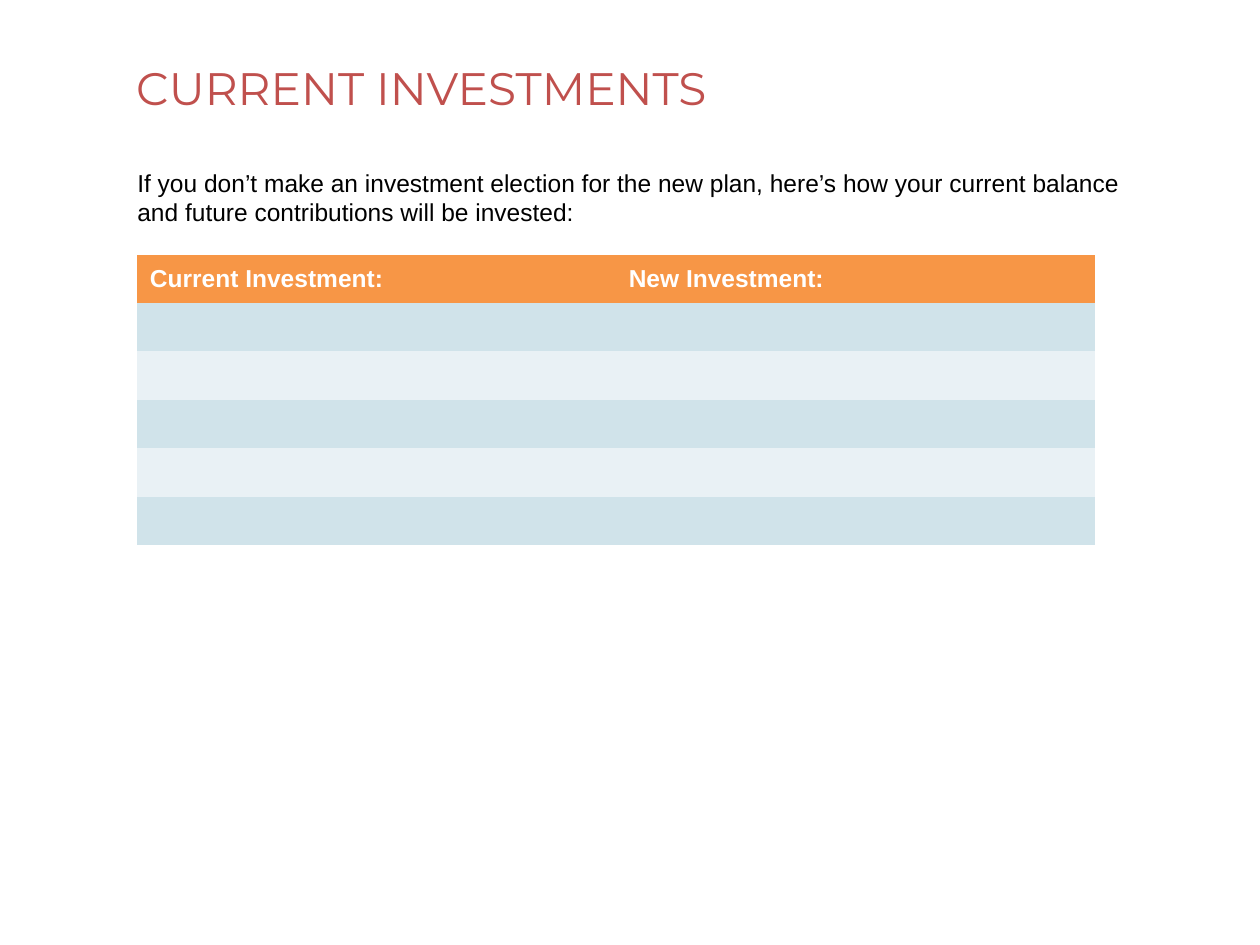
from pptx import Presentation
from pptx.dml.color import RGBColor
from pptx.enum import text
from pptx.util import Inches, Pt

# Content
TITLE = "CURRENT INVESTMENTS"
INTRO = ("If you don’t make an investment election for the new plan, here’s how "
         "your current balance and future contributions will be invested:")
HEADERS = ["Current Investment:", "New Investment:"]
EMPTY_ROWS = 5

# Colours and table style
RED = RGBColor(0xC0, 0x50, 0x4D)
BLACK = RGBColor(0x00, 0x00, 0x00)
WHITE = RGBColor(0xFF, 0xFF, 0xFF)
ORANGE = RGBColor(0xF7, 0x96, 0x46)
BANDS = [RGBColor(0xD0, 0xE3, 0xEA), RGBColor(0xE9, 0xF1, 0xF5)]
PLAIN_STYLE = "{2D5ABB26-0587-4C30-8999-92F81FD0307C}"  # no style, no grid


def write(frame, words, *, font="Arial", size=14, color=BLACK, bold=False, spacing=None):
    paragraph = frame.paragraphs[0]
    paragraph.alignment = text.PP_ALIGN.LEFT
    paragraph.line_spacing = spacing
    run = paragraph.add_run()
    run.text = words
    run.font.name, run.font.size, run.font.bold = font, Pt(size), bold
    run.font.color.rgb = color


def place(shape, left, top, width, height, anchor):
    shape.left, shape.top = Inches(left), Inches(top)
    shape.width, shape.height = Inches(width), Inches(height)
    frame = shape.text_frame
    frame.word_wrap = True
    frame.auto_size = text.MSO_AUTO_SIZE.NONE
    frame.vertical_anchor = anchor
    frame.margin_left = frame.margin_top = frame.margin_right = frame.margin_bottom = 0
    return frame


presentation = Presentation()
presentation.slide_width, presentation.slide_height = Inches(10), Inches(7.5)
slide = presentation.slides.add_slide(presentation.slide_layouts[5])

# Title and introduction
title = place(slide.shapes.title, 1.08, 0.32, 8.17, 0.81, text.MSO_ANCHOR.MIDDLE)
write(title, TITLE, font="Montserrat", size=26, color=RED, spacing=0.85)
intro_box = slide.shapes.add_textbox(0, 0, 0, 0)
write(place(intro_box, 1.09, 1.33, 7.83, 0.55, text.MSO_ANCHOR.TOP), INTRO)

# Investment table: header row, then alternating bands
table_shape = slide.shapes.add_table(
    1 + EMPTY_ROWS, len(HEADERS), Inches(1.09), Inches(2.02), Inches(7.6), Inches(2.31))
table = table_shape.table
table._tbl.tblPr[0].text = PLAIN_STYLE
for row_index, row in enumerate(table.rows):
    for column_index, cell in enumerate(row.cells):
        cell.vertical_anchor = text.MSO_ANCHOR.MIDDLE
        cell.fill.solid()
        if row_index == 0:
            cell.fill.fore_color.rgb = ORANGE
            write(cell.text_frame, HEADERS[column_index], color=WHITE, bold=True)
        else:
            cell.fill.fore_color.rgb = BANDS[(row_index - 1) % len(BANDS)]
            # Keeps the empty line within the row height
            cell.margin_top = cell.margin_bottom = Inches(0.02)

presentation.save("out.pptx")
